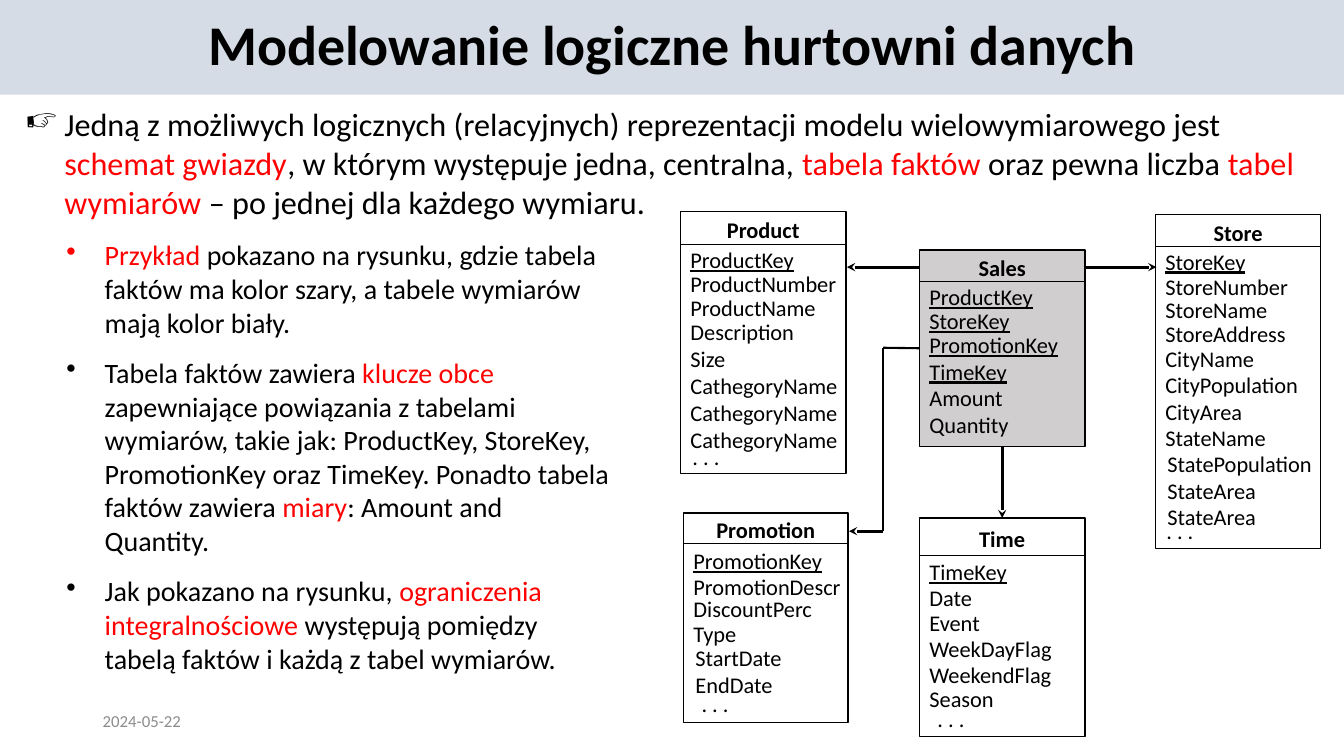
from lxml import etree
from pptx import Presentation
from pptx.dml.color import RGBColor
from pptx.enum.shapes import MSO_CONNECTOR, MSO_SHAPE
from pptx.enum.text import MSO_ANCHOR, PP_ALIGN
from pptx.oxml.ns import qn
from pptx.util import Inches, Pt

RECT, STRAIGHT = MSO_SHAPE.RECTANGLE, MSO_CONNECTOR.STRAIGHT
CENTER, LEFT, MIDDLE, TOP = PP_ALIGN.CENTER, PP_ALIGN.LEFT, MSO_ANCHOR.MIDDLE, MSO_ANCHOR.TOP
BOTTOM_SIDE, LEFT_SIDE, TOP_SIDE = 2, 1, 0
FONT = "Calibri"
COLORS = {"band": "D6DCE5", "text": "000000", "accent": "FF0000",
          "date": "8C8C8C", "fact": "D0CECE", "dimension": "FFFFFF"}

# Content: text between asterisks is highlighted
TITLE = "Modelowanie logiczne hurtowni danych"
DATE = "2024-05-22"
LEAD = [
    "Jedną z możliwych logicznych (relacyjnych) reprezentacji modelu wielowymiarowego jest "
    "*schemat gwiazdy*, w którym występuje jedna, centralna, *tabela faktów *oraz pewna liczba "
    "*tabel wymiarów *– po jednej dla każdego wymiaru.",
]
POINTS = [
    "*Przykład *pokazano na rysunku, gdzie tabela faktów ma kolor szary, "
    "a tabele wymiarów mają kolor biały.",
    "Tabela faktów zawiera *klucze obce *zapewniające powiązania z tabelami wymiarów, "
    "takie jak: ProductKey, StoreKey, PromotionKey oraz TimeKey. "
    "Ponadto tabela faktów zawiera *miary*: Amount and Quantity.",
    "Jak pokazano na rysunku, *ograniczenia integralnościowe* występują pomiędzy "
    "tabelą faktów i każdą z tabel wymiarów.",
]

# Star schema: box (left, top, width, height), title top, divider y,
# number of underlined keys, and fields as (name, top, indent)
TABLES = {
    "Product": ((6.75, 2.1, 1.64, 2.6), 2.1, 2.43, 1, [
        ("ProductKey", 2.39, 0), ("ProductNumber", 2.63, 0), ("ProductName", 2.87, 0),
        ("Description", 3.11, 0), ("Size", 3.37, 0), ("CathegoryName", 3.64, 0),
        ("CathegoryName", 3.91, 0), ("CathegoryName", 4.18, 0), (". . .", 4.35, 0.02)]),
    "Sales": ((9.12, 2.48, 1.64, 1.95), 2.47, 2.79, 4, [
        ("ProductKey", 2.76, 0), ("StoreKey", 3.0, 0), ("PromotionKey", 3.24, 0),
        ("TimeKey", 3.5, 0), ("Amount", 3.76, 0), ("Quantity", 4.03, 0)]),
    "Time": ((9.12, 5.14, 1.64, 2.17), 5.16, 5.51, 1, [
        ("TimeKey", 5.49, 0), ("Date", 5.75, 0), ("Event", 5.99, 0),
        ("WeekDayFlag", 6.25, 0), ("WeekendFlag", 6.51, 0), ("Season", 6.75, 0),
        (". . .", 6.95, 0.08)]),
    "Promotion": ((6.78, 5.09, 1.63, 2.08), 5.07, 5.39, 1, [
        ("PromotionKey", 5.38, 0), ("PromotionDescr", 5.64, 0), ("DiscountPerc", 5.86, 0),
        ("Type", 6.1, 0), ("StartDate", 6.34, 0.02), ("EndDate", 6.61, 0.02),
        (". . .", 6.8, 0.08)]),
    "Store": ((11.46, 2.13, 1.64, 3.31), 2.12, 2.45, 1, [
        ("StoreKey", 2.41, 0), ("StoreNumber", 2.66, 0), ("StoreName", 2.89, 0),
        ("StoreAddress", 3.13, 0), ("CityName", 3.38, 0), ("CityPopulation", 3.63, 0),
        ("CityArea", 3.9, 0), ("StateName", 4.16, 0), ("StatePopulation", 4.42, 0.02),
        ("StateArea", 4.68, 0.02), ("StateArea", 4.94, 0.02), (". . .", 5.08, 0.01)]),
}
FACT_TABLE = "Sales"
ROW_HEIGHT, ROW_WIDTH = 0.36, 1.87

prs = Presentation()
prs.slide_width, prs.slide_height = Inches(13.33), Inches(7.5)
slide = prs.slides.add_slide(prs.slide_layouts[6])


def color(name):
    return RGBColor.from_string(COLORS[name])


def style(run, size, color_name="text", bold=False, underline=False):
    run.font.name, run.font.size = FONT, Pt(size)
    run.font.color.rgb = color(color_name)
    run.font.bold, run.font.underline = bold, underline


def add_box(box, fill, outlined=True):
    rect = slide.shapes.add_shape(RECT, *map(Inches, box))
    rect.shadow.inherit = False
    rect.fill.solid()
    rect.fill.fore_color.rgb = color(fill)
    if outlined:
        rect.line.color.rgb = color("text")
        rect.line.width = Pt(1)
    else:
        rect.line.fill.background()
    return rect


def add_label(text, box, size=16, align=LEFT, anchor=TOP, **look):
    frame = slide.shapes.add_textbox(*map(Inches, box)).text_frame
    frame.word_wrap = True
    frame.vertical_anchor = anchor
    frame.text = text
    frame.paragraphs[0].alignment = align
    style(frame.paragraphs[0].runs[0], size, **look)


def add_bullets(items, box, size, bullet, margin, hanging):
    frame = slide.shapes.add_textbox(*map(Inches, box)).text_frame
    frame.word_wrap = True
    for i, item in enumerate(items):
        para = frame.paragraphs[0] if i == 0 else frame.add_paragraph()
        para.space_before = Pt(12)
        props = para._p.get_or_add_pPr()
        props.set("marL", str(Inches(margin)))
        props.set("indent", str(-Inches(hanging)))
        etree.SubElement(props, qn("a:buChar")).set("char", bullet)
        for j, part in enumerate(item.split("*")):
            if part:
                run = para.add_run()
                run.text = part
                style(run, size, "accent" if j % 2 else "text")


def add_line(start, end, width, arrow=False):
    line = slide.shapes.add_connector(STRAIGHT, *map(Inches, start + end))
    line.line.color.rgb = color("text")
    line.line.width = Pt(width)
    if arrow:
        etree.SubElement(line.line._get_or_add_ln(), qn("a:tailEnd")).set("type", "stealth")
    etree.SubElement(line._element.spPr, qn("a:effectLst"))
    return line


# Title band
band = add_box((0, 0, 13.33, 0.94), "band", outlined=False)
band.text_frame.text = TITLE
band.text_frame.vertical_anchor = MIDDLE
heading = band.text_frame.paragraphs[0]
heading.alignment, heading.line_spacing = CENTER, 0.9
style(heading.runs[0], 40, bold=True)

# Date and body text
add_label(DATE, (0.92, 6.95, 3, 0.4), 12, anchor=MIDDLE, color_name="date")
add_bullets(LEAD, (0.15, 0.99, 13.04, 1.26), 23, "☞", 0.39, 0.39)
add_bullets(POINTS, (0.15, 2.31, 6.02, 4.48), 20, "•", 0.79, 0.38)

# Tables of the star schema
boxes = {}
for name, (box, title_top, divider, key_count, fields) in TABLES.items():
    left, _, width, _ = box
    boxes[name] = add_box(box, "fact" if name == FACT_TABLE else "dimension")
    add_label(name, (left, title_top, width, ROW_HEIGHT), align=CENTER, bold=True)
    add_line((left, divider), (left + width, divider), 0.75)
    for i, (field, top, indent) in enumerate(fields):
        add_label(field, (left + indent, top, ROW_WIDTH, ROW_HEIGHT), underline=i < key_count)

# Links from the fact table to its dimensions
add_line((9.12, 2.65), (8.4, 2.65), 2, arrow=True)
add_line((10.76, 2.65), (11.47, 2.65), 2, arrow=True)
to_time = add_line((9.94, 4.43), (9.94, 5.14), 2, arrow=True)
to_time.begin_connect(boxes["Sales"], BOTTOM_SIDE)
to_time.end_connect(boxes["Time"], TOP_SIDE)
from_sales = add_line((9.12, 3.45), (8.76, 3.45), 1.5)
from_sales.begin_connect(boxes["Sales"], LEFT_SIDE)
add_line((8.76, 3.45), (8.76, 5.27), 1.5)
add_line((8.76, 5.27), (8.42, 5.27), 2, arrow=True)

prs.save("out.pptx")
